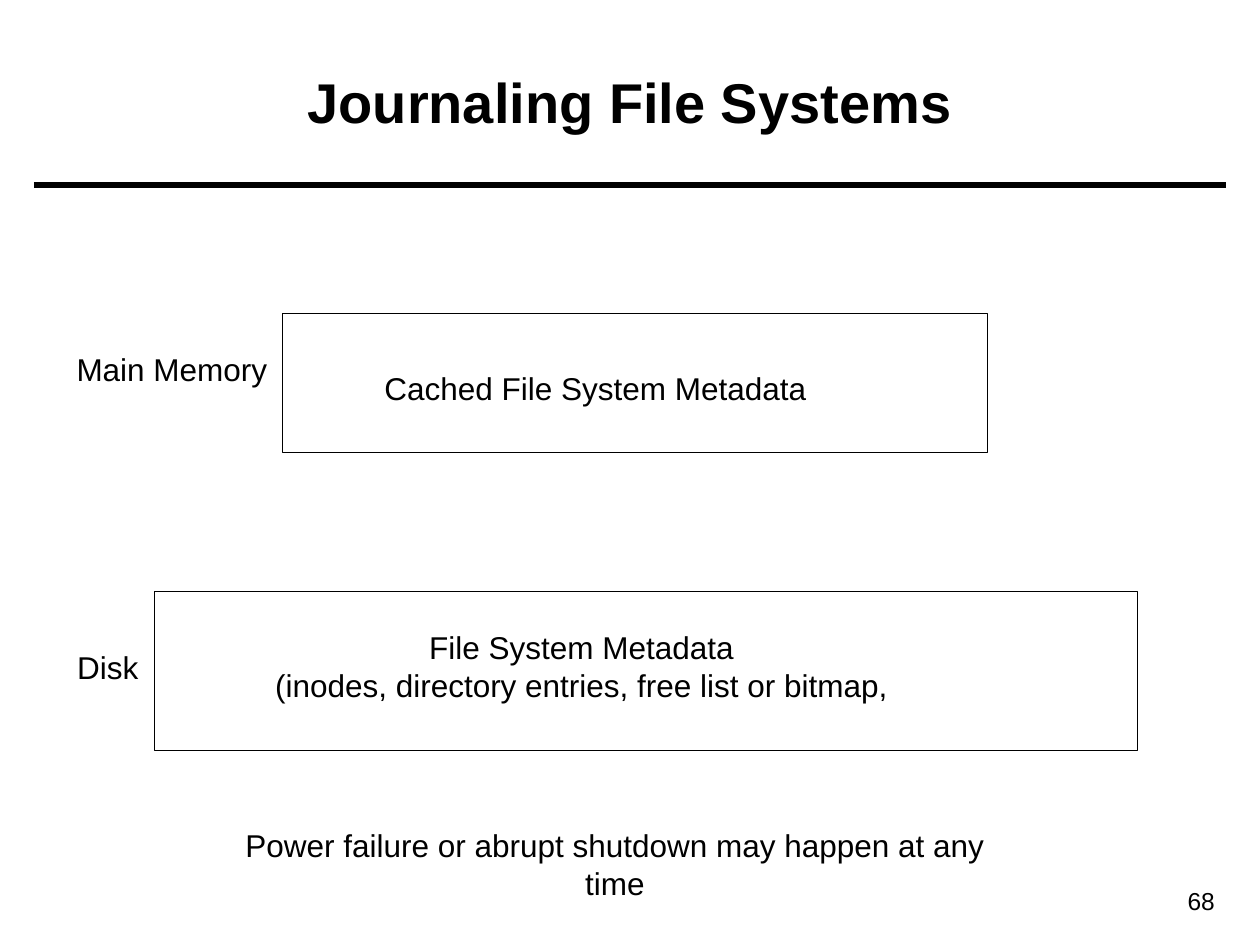
import pptx
import pptx.util
import pptx.dml.color
import pptx.enum.shapes
import pptx.enum.text
import pptx.oxml

hues = {"ink": "000000", "page": "FFFFFF"}
ink = pptx.dml.color.RGBColor.from_string(hues["ink"])
align = pptx.enum.text.PP_ALIGN

deck = pptx.Presentation()
deck.slide_width = pptx.util.Inches(10)
deck.slide_height = pptx.util.Inches(7.5)
cell = deck.slide_width / 100  # grid of 100 columns by 75 rows


def grid(*cells):
    return [round(n * cell) for n in cells]


def write(frame, text, size, side=align.CENTER, bold=False):
    frame.text = text
    frame.word_wrap = True
    for para in frame.paragraphs:
        para.alignment = side
        para.font.name = "Arial"
        para.font.size = pptx.util.Pt(size)
        para.font.bold = bold
        para.font.color.rgb = ink


slide = deck.slides.add_slide(deck.slide_layouts[5])
slide.background.fill.solid()
slide.background.fill.fore_color.rgb = pptx.dml.color.RGBColor.from_string(hues["page"])

# Title
title = slide.shapes.title
title.left, title.top, title.width, title.height = grid(3.55, 1.75, 92.9, 12.5)
write(title.text_frame, "Journaling File Systems", 32, bold=True)
title.text_frame.vertical_anchor = pptx.enum.text.MSO_ANCHOR.MIDDLE

# Rule under the title
rule = slide.shapes.add_connector(
    pptx.enum.shapes.MSO_CONNECTOR.STRAIGHT, *grid(2.7, 14.68, 97.3, 14.68))
rule.line.color.rgb = ink
rule.line.width = pptx.util.Pt(3)
rule._element.spPr.append(pptx.oxml.parse_xml(
    '<a:effectLst xmlns:a="http://schemas.openxmlformats.org/drawingml/2006/main"/>'))

# Disk and memory boxes
for area in [(12.23, 46.93, 78, 12.6), (22.4, 24.9, 55.95, 11)]:
    box = slide.shapes.add_shape(
        pptx.enum.shapes.MSO_SHAPE.RECTANGLE, *grid(*area))
    box.shadow.inherit = False
    box.fill.background()
    box.line.color.rgb = ink
    box.line.width = pptx.util.Pt(0.25)

# Labels, box captions and closing remark, centred on a column
notes = [
    ("Disk", 8.55, 50.9, 8.8, 4),
    ("Main Memory", 13.65, 27.3, 19, 4),
    ("File System Metadata\n(inodes, directory entries, free list or bitmap,",
     46.15, 49.35, 54, 7),
    ("Cached File System Metadata", 47.25, 28.8, 38, 4),
    ("Power failure or abrupt shutdown may happen at any time",
     48.8, 65.1, 63, 7),
]
for text, mid, top, wide, high in notes:
    note = slide.shapes.add_textbox(*grid(mid - wide / 2, top, wide, high))
    write(note.text_frame, text, 18)

# Page number
page = slide.shapes.add_textbox(*grid(87, 69.8, 10.4, 3.4))
write(page.text_frame, "68", 14, align.RIGHT)

deck.save("out.pptx")
